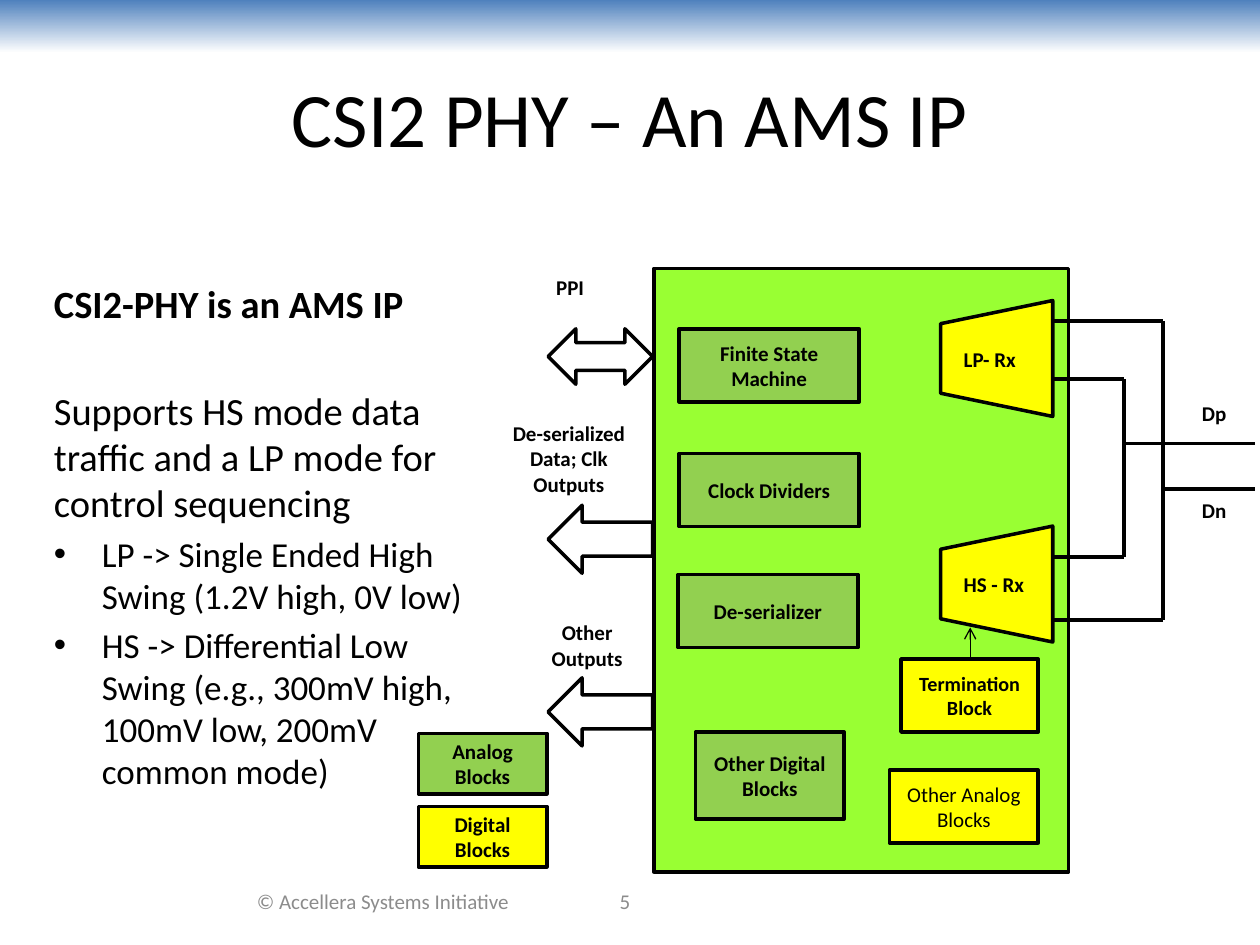
import pptx
import pptx.util
import pptx.dml.color
import pptx.enum.shapes
import pptx.enum.text
import pptx.oxml
import pptx.oxml.ns

Kind = pptx.enum.shapes.MSO_SHAPE
Side = pptx.enum.text.PP_ALIGN
Mid = pptx.enum.text.MSO_ANCHOR
Pt = pptx.util.Pt

deck = pptx.Presentation()
deck.slide_width = pptx.util.Inches(10)
deck.slide_height = pptx.util.Inches(7.5)
COL = deck.slide_width / 100
ROW = deck.slide_height / 75
slide = deck.slides.add_slide(deck.slide_layouts[6])
GREEN, YELLOW, BLACK, GREY = "92D050", "FFFF00", "000000", "8C8C8C"


def tint(code):
    return pptx.dml.color.RGBColor.from_string(code)


def place(box, col, row, wide, high):
    return (round((box[0] + col) * COL), round((box[1] + row) * ROW),
            round(wide * COL), round(high * ROW))


def add_node(parent, tag, **attrs):
    node = pptx.oxml.parse_xml(f"<{tag} {pptx.oxml.ns.nsdecls('a')}/>")
    for key, value in attrs.items():
        node.set(key, value)
    parent.append(node)


def style(par, size, bold=False, color=BLACK, side=Side.LEFT):
    par.alignment = side
    for run in par.runs:
        font = run.font
        font.name, font.size, font.bold = "Calibri", Pt(size), bold
        font.color.rgb = tint(color)


def label(spot, text, size=12, bold=True, color=BLACK, side=Side.CENTER, anchor=Mid.TOP):
    frame = slide.shapes.add_textbox(*spot).text_frame
    frame.word_wrap = True
    frame.vertical_anchor = anchor
    frame.text = text
    style(frame.paragraphs[0], size, bold, color, side)


def shape(spot, fill, kind=Kind.RECTANGLE, text="", size=12, bold=True):
    item = slide.shapes.add_shape(kind, *spot)
    item.shadow.inherit = False
    item.fill.solid()
    item.fill.fore_color.rgb = tint(fill)
    item.line.color.rgb = tint(BLACK)
    item.line.width = Pt(2)
    if text:
        frame = item.text_frame
        frame.word_wrap = True
        frame.vertical_anchor = Mid.MIDDLE
        frame.text = text
        style(frame.paragraphs[0], size, bold, side=Side.CENTER)
    return item


def wire(box, start, end, width=2.25, arrow=False):
    ax, ay = place(box, *start, 0, 0)[:2]
    bx, by = place(box, *end, 0, 0)[:2]
    item = slide.shapes.add_connector(
        pptx.enum.shapes.MSO_CONNECTOR.STRAIGHT, ax, ay, bx, by)
    item.line.color.rgb = tint(BLACK)
    item.line.width = Pt(width)
    if arrow:
        add_node(item.line._get_or_add_ln(), "a:tailEnd", type="arrow")
    add_node(item._element.spPr, "a:effectLst")


def header(box):
    band = slide.shapes.add_shape(Kind.RECTANGLE, *place(box, 0, 0, box[2], 4.2))
    band.shadow.inherit = False
    band.line.fill.background()
    band.fill.gradient()
    band.fill.gradient_angle = 270
    for stop, code in zip(band.fill.gradient_stops, ("4F81BD", "FFFFFF")):
        stop.color.rgb = tint(code)
    label(place(box, 5, 3, 90, 12.5), "CSI2 PHY – An AMS IP", 44, False, anchor=Mid.MIDDLE)


def notes(box):
    frame = slide.shapes.add_textbox(*place(box, 0, 0, *box[2:])).text_frame
    frame.word_wrap = True
    lines = [
        ("CSI2-PHY is an AMS IP", 22, 0, True, False),
        ("Supports HS mode data traffic and a LP mode for control sequencing",
         22, 35, False, False),
        ("LP -> Single Ended High Swing (1.2V high, 0V low)", 20, 4, False, True),
        ("HS -> Differential Low Swing (e.g., 300mV high, 100mV low, 200mV common mode)",
         20, 4, False, True),
    ]
    for spot, (text, size, gap, bold, dot) in enumerate(lines):
        par = frame.add_paragraph() if spot else frame.paragraphs[0]
        par.text = text
        par.space_before = Pt(gap)
        if dot:
            props = par._p.get_or_add_pPr()
            inset = round(3.8 * COL)
            props.set("marL", str(inset))
            props.set("indent", str(-inset))
            add_node(props, "a:buFont", typeface="Arial")
            add_node(props, "a:buChar", char="•")
        style(par, size, bold)


def chip(box):
    shape(place(box, 0, 0, *box[2:]), "99FF33")
    for text, row in (("LP- Rx", 2.7), ("HS - Rx", 20.6)):
        mux = shape(place(box, 22.6, row, 9.2, 8.9), YELLOW, Kind.FLOWCHART_MANUAL_OPERATION)
        mux.rotation = 90
        label(place(box, 23.6, row + 3, 7.3, 3), text, side=Side.LEFT)
    for text, fill, size, bold, *cell in (
            ("Finite State Machine", GREEN, 12, True, 2, 4.8, 14.3, 5.8),
            ("Clock Dividers", GREEN, 12, True, 2, 14.7, 14.3, 5.8),
            ("De-serializer", GREEN, 12, True, 1.9, 24.3, 14.3, 5.8),
            ("Other Digital Blocks", GREEN, 12, True, 3.3, 36.8, 11.8, 6.9),
            ("Termination Block", YELLOW, 11.5, True, 19.6, 31, 10.9, 5.8),
            ("Other Analog Blocks", YELLOW, 12, False, 18.7, 39.8, 11.8, 5.8)):
        shape(place(box, *cell), fill, text=text, size=size, bold=bold)
    wire(box, (25.1, 31), (25.1, 28.5), 0.75, True)


def ports(box):
    for text, cell, kind, row, high in (
            ("PPI", (2.4, 0, 6.9, 3), Kind.LEFT_RIGHT_ARROW, 4.8, 4.4),
            ("De-serialized Data; Clk Outputs", (0, 11.6, 11.5, 7.1),
             Kind.LEFT_ARROW, 18.8, 5.4),
            ("Other Outputs", (2.6, 27.4, 9.2, 5.1), Kind.LEFT_ARROW, 32.5, 5.4)):
        shape(place(box, 4.1, row, 8.3, high), "FFFFFF", kind)
        label(place(box, *cell), text)


def lanes(box):
    near, far, end, base = 5.6, 8.7, box[2], box[3]
    wire(box, (0, 0), (7.4, 0), 0.75)
    for bus, top, low, out in ((near, 4.6, 18.7, 9.7), (far, 0, base, 13.3)):
        wire(box, (0, top), (bus, top))
        wire(box, (0, low), (bus, low))
        wire(box, (bus, top), (bus, low))
        wire(box, (bus, out), (end, out))
    for text, row in (("Dp", 5.8), ("Dn", 13.5)):
        label(place(box, 10.8, row, 5.2, 3), text, side=Side.LEFT)


def legend(box):
    for row, (text, fill) in enumerate((("Analog Blocks", GREEN), ("Digital Blocks", YELLOW))):
        shape(place(box, 0, row * 5.8, box[2], 4.8), fill, text=text)


def footer(box):
    for text, col, wide in (("© Accellera Systems Initiative", 0, 24.2), ("5", 21.7, 19.2)):
        label(place(box, col, 0, wide, box[3]), text, 12, False, GREY, anchor=Mid.MIDDLE)


header((0, 0, 100, 15.5))
notes((3.3, 21.7, 36.1, 43.7))
footer((18.3, 69.5, 40.9, 4))
chip((51.9, 21.3, 32.9, 47.9))
lanes((83.6, 25.5, 16, 23.7))
ports((39.4, 21.3, 12.5, 38))
legend((33.2, 58.2, 10.2, 10.6))
deck.save("out.pptx")
